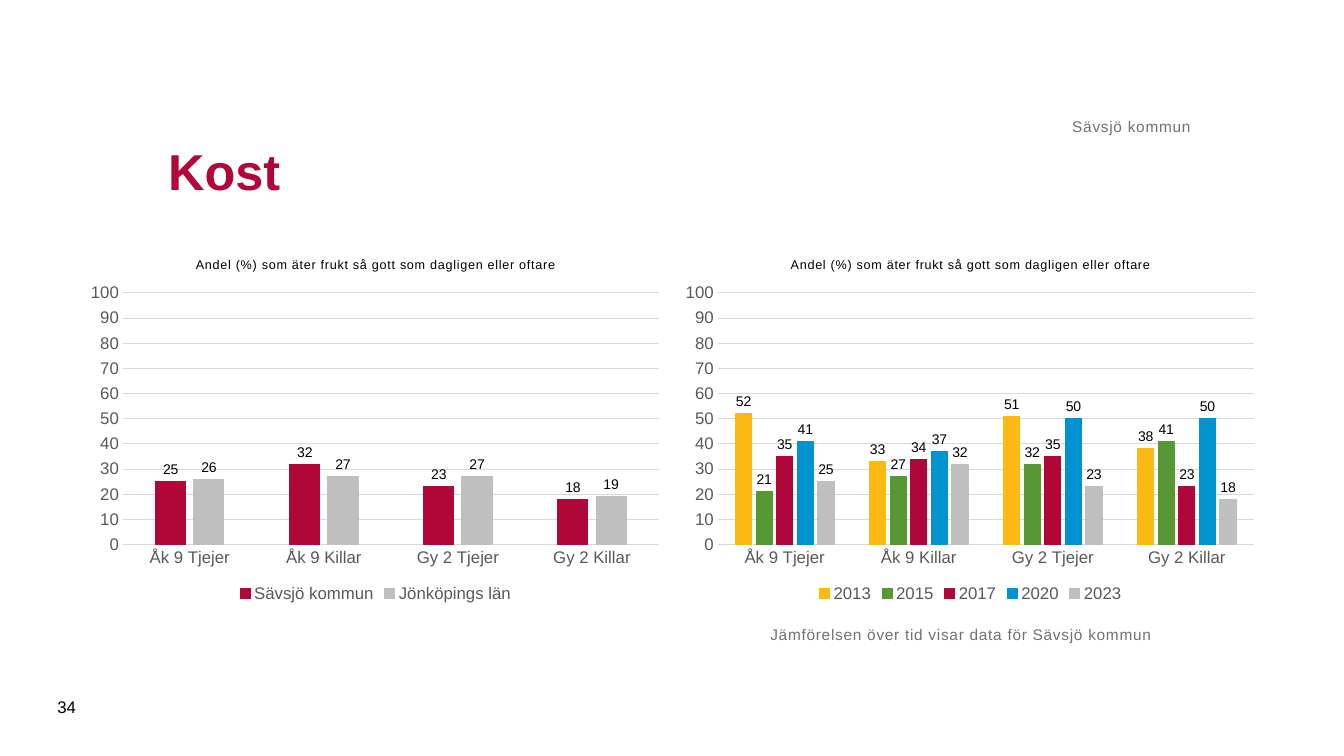
import pptx
import pptx.chart.data
import pptx.dml.color
import pptx.enum.chart
import pptx.enum.text
import pptx.oxml
import pptx.util
from dataclasses import dataclass

Inches, Pt = pptx.util.Inches, pptx.util.Pt
RGB = pptx.dml.color.RGBColor.from_string
ANCHOR = pptx.enum.text.MSO_ANCHOR
ALIGN = pptx.enum.text.PP_ALIGN
XL = pptx.enum.chart


@dataclass(frozen=True)
class Theme:
    font: str = "Arial"
    crimson: str = "B1063A"
    silver: str = "BFBFBF"
    yellow: str = "FDB913"
    green: str = "579835"
    blue: str = "0093D0"
    black: str = "000000"
    axis_text: str = "595959"
    grid: str = "D9D9D9"
    note: str = "717171"
    title_size: int = 36
    axis_size: int = 12
    note_size: int = 11
    label_size: int = 10
    chart_title_size: int = 9
    tracking: str = "50"


theme = Theme()


def style(font, size, color, bold=False):
    font.name, font.size, font.bold = theme.font, Pt(size), bold
    font.color.rgb = RGB(color)


def add_text(text, box, size, color, anchor, bold=False, align=ALIGN.LEFT, tracked=False):
    frame = slide.shapes.add_textbox(*map(Inches, box)).text_frame
    frame.word_wrap = True
    frame.vertical_anchor = anchor
    paragraph = frame.paragraphs[0]
    paragraph.alignment = align
    run = paragraph.add_run()
    run.text = text
    style(paragraph.font, size, color, bold)
    if tracked:
        frame.margin_left = frame.margin_right = frame.margin_top = frame.margin_bottom = 0
        run._r.get_or_add_rPr().set("spc", theme.tracking)


deck = pptx.Presentation()
deck.slide_width, deck.slide_height = Inches(13.33), Inches(7.5)
slide = deck.slides.add_slide(deck.slide_layouts[6])

# Chart content: municipality against county, then municipality over time
groups = ["Åk 9 Tjejer", "Åk 9 Killar", "Gy 2 Tjejer", "Gy 2 Killar"]
question = "Andel (%) som äter frukt så gott som dagligen eller oftare"
number_format = "#,##0;#,##0"
by_area = [
    ("Sävsjö kommun", [25, 32, 23, 18], theme.crimson),
    ("Jönköpings län", [26, 27, 27, 19], theme.silver),
]
by_year = [
    ("2013", [52, 33, 51, 38], theme.yellow),
    ("2015", [21, 27, 32, 41], theme.green),
    ("2017", [35, 34, 35, 23], theme.crimson),
    ("2020", [41, 37, 50, 50], theme.blue),
    ("2023", [25, 32, 23, 18], theme.silver),
]
plot_layout = (
    '<c:layout xmlns:c="http://schemas.openxmlformats.org/drawingml/2006/chart">'
    '<c:manualLayout><c:layoutTarget val="inner"/>'
    '<c:xMode val="edge"/><c:yMode val="edge"/>'
    '<c:x val="0.073"/><c:y val="0.14"/><c:w val="0.906"/><c:h val="0.69"/>'
    '</c:manualLayout></c:layout>'
)

for left, rows in ((0.79, by_area), (6.69, by_year)):
    data = pptx.chart.data.CategoryChartData(number_format="0")
    data.categories = groups
    for name, shares, _ in rows:
        data.add_series(name, shares)
    chart = slide.shapes.add_chart(
        XL.XL_CHART_TYPE.COLUMN_CLUSTERED,
        Inches(left), Inches(2.4), Inches(5.87), Inches(3.62), data).chart
    style(chart.font, theme.label_size, theme.black)

    # Heading and legend
    chart.has_title = True
    heading = chart.chart_title.text_frame.paragraphs[0]
    run = heading.add_run()
    run.text = question
    style(heading.font, theme.chart_title_size, theme.black)
    style(run.font, theme.chart_title_size, theme.black)
    run._r.get_or_add_rPr().set("spc", theme.tracking)
    chart.chart_title.include_in_layout = False
    chart.has_legend = True
    chart.legend.position = XL.XL_LEGEND_POSITION.BOTTOM
    chart.legend.include_in_layout = False
    style(chart.legend.font, theme.axis_size, theme.axis_text)

    # Axes
    for axis in (chart.category_axis, chart.value_axis):
        axis.major_tick_mark = axis.minor_tick_mark = XL.XL_TICK_MARK.NONE
        style(axis.tick_labels.font, theme.axis_size, theme.axis_text)
    percent = chart.value_axis
    percent.minimum_scale, percent.maximum_scale, percent.major_unit = 0, 100, 10
    percent.tick_labels.number_format = number_format
    percent.tick_labels.number_format_is_linked = False
    percent.format.line.fill.background()
    for line in (chart.category_axis.format.line, percent.major_gridlines.format.line):
        line.color.rgb = RGB(theme.grid)
        line.width = Pt(0.75)

    # Columns and their labels
    plot = chart.plots[0]
    plot.gap_width, plot.overlap, plot.vary_by_categories = 219, -27, False
    for series, (_, _, color) in zip(plot.series, rows):
        series.format.fill.solid()
        series.format.fill.fore_color.rgb = RGB(color)
        series.format.line.color.rgb = RGB(color)
        series.format.line.width = Pt(0.75)
        labels = series.data_labels
        labels.show_value = True
        labels.position = XL.XL_LABEL_POSITION.OUTSIDE_END
        labels.number_format = number_format
        labels.number_format_is_linked = False
        style(labels.font, theme.label_size, theme.black)

    # Same plot area in both charts
    plot_area = chart._chartSpace.chart.plotArea
    for old_layout in plot_area.xpath("c:layout"):
        plot_area.remove(old_layout)
    plot_area.insert(0, pptx.oxml.parse_xml(plot_layout))

# Title, notes and slide number
add_text("Kost", (1.57, 0.98, 10.24, 1.42), theme.title_size, theme.crimson,
         ANCHOR.MIDDLE, bold=True)
add_text("Jämförelsen över tid visar data för Sävsjö kommun", (7.64, 6.2, 5.31, 0.94),
         theme.note_size, theme.note, ANCHOR.TOP, tracked=True)
add_text("Sävsjö kommun", (1.57, 0.62, 10.24, 0.73), theme.note_size, theme.note,
         ANCHOR.BOTTOM, align=ALIGN.RIGHT, tracked=True)
add_text("34", (0.47, 6.81, 0.57, 0.4), theme.axis_size, theme.black, ANCHOR.MIDDLE)

deck.save("out.pptx")
